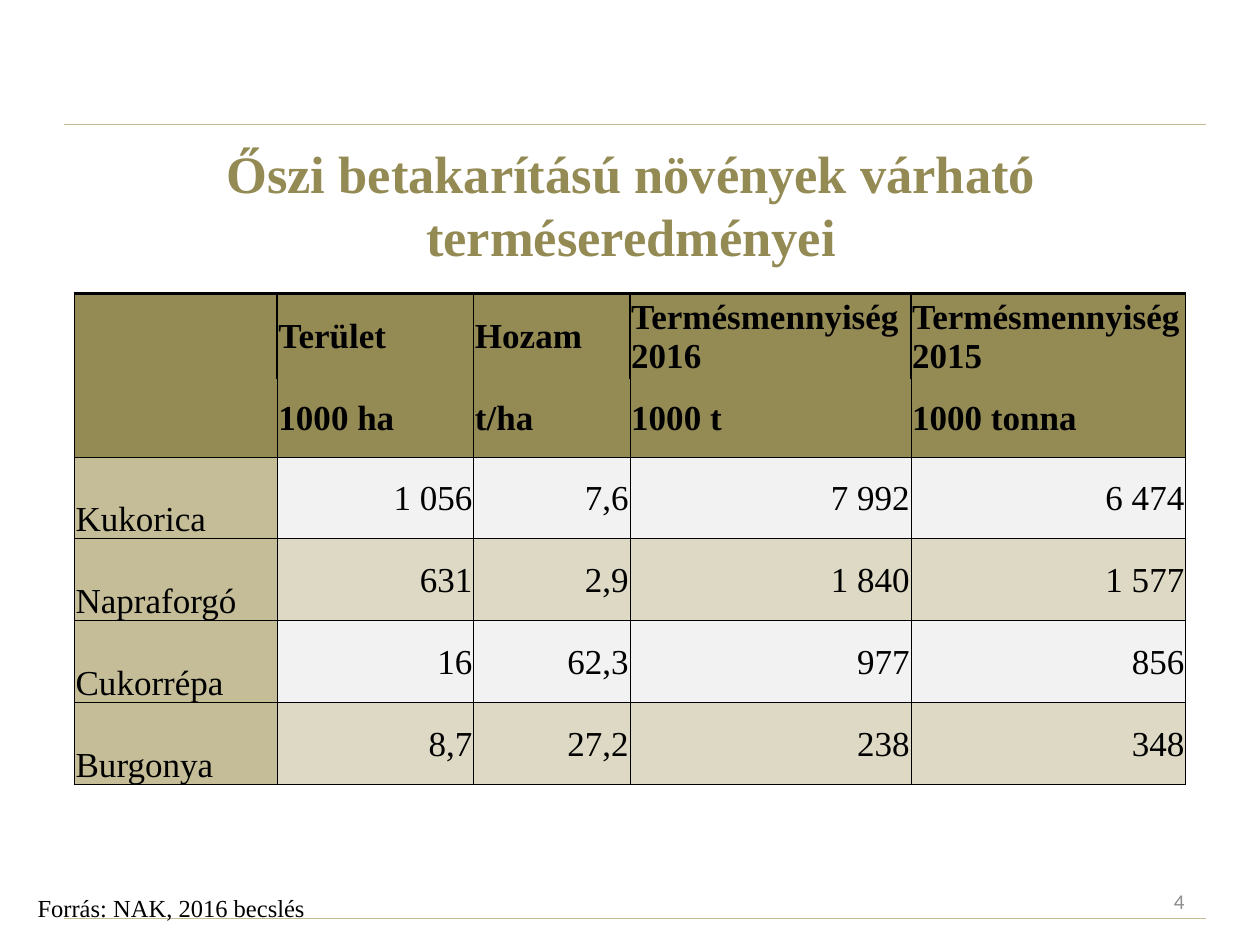
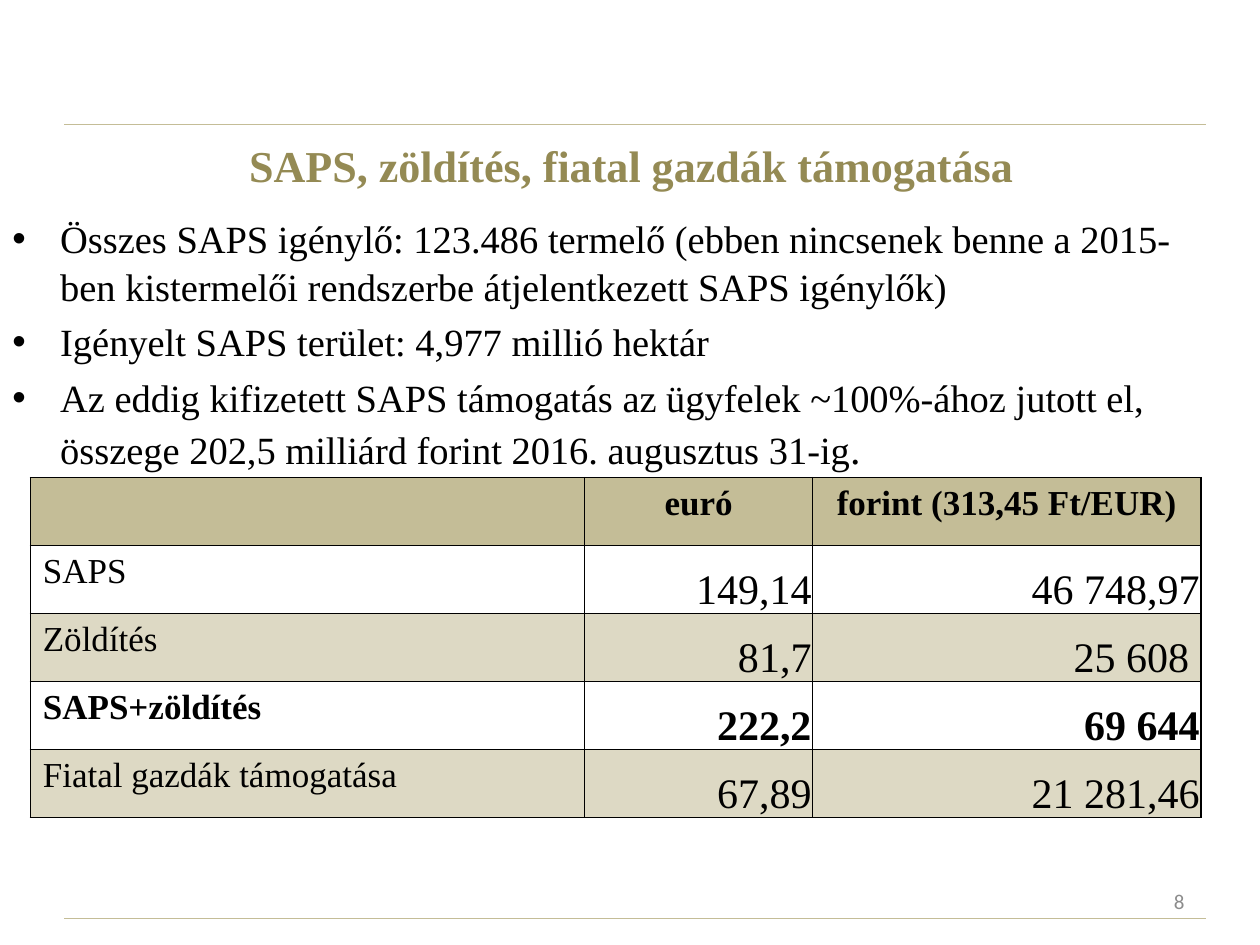
from dataclasses import dataclass, field

from lxml import etree
from pptx import Presentation
from pptx import util as u
from pptx.dml import color
from pptx.enum import shapes, text
from pptx.oxml import ns

Inches, Pt = u.Inches, u.Pt
ALIGN = text.PP_ALIGN
ANCHOR = text.MSO_ANCHOR


@dataclass(frozen=True)
class Theme:
    serif: str = "Times New Roman"
    sans: str = "Calibri"
    olive: str = "948A54"
    sand: str = "C4BD97"
    cream: str = "DDD9C4"
    pale: str = "F2F2F2"
    black: str = "000000"
    grey: str = "8C8C8C"
    title: float = 30
    small_title: float = 25.2
    figure: float = 24
    body: float = 22
    cell: float = 20
    source: float = 14
    number: float = 12


THEME = Theme()


@dataclass
class CellStyle:
    fill: str = None
    size: float = THEME.cell
    bold: bool = False
    align: ALIGN = ALIGN.LEFT
    anchor: ANCHOR = ANCHOR.TOP
    tight: bool = True
    borders: dict = field(default_factory=dict)


def format_font(font, size, ink=THEME.black, bold=False, name=THEME.serif):
    font.name = name
    font.size = Pt(size)
    font.bold = bold
    font.color.rgb = color.RGBColor.from_string(ink)


def add_text_box(slide, place, anchor=ANCHOR.TOP):
    frame = slide.shapes.add_textbox(*map(Inches, place)).text_frame
    frame.word_wrap = True
    frame.vertical_anchor = anchor
    return frame


def add_label(slide, place, words, align=ALIGN.LEFT, anchor=ANCHOR.TOP, **font):
    frame = add_text_box(slide, place, anchor)
    frame.text = words
    paragraph = frame.paragraphs[0]
    paragraph.alignment = align
    format_font(paragraph.runs[0].font, **font)


def add_rule(slide, top):
    rule = slide.shapes.add_connector(
        shapes.MSO_CONNECTOR.STRAIGHT,
        Inches(0.51), Inches(top), Inches(9.57), Inches(top))
    rule.line.color.rgb = color.RGBColor.from_string(THEME.sand)
    rule.line.width = Pt(0.75)
    etree.SubElement(rule._element.spPr, ns.qn("a:effectLst"))


def add_base_slide(presentation, title, title_height, title_size, number):
    slide = presentation.slides.add_slide(presentation.slide_layouts[6])
    for top in (7.29, 0.99):
        add_rule(slide, top)
    add_label(slide, (0.51, 1.07, 9, title_height), title, ALIGN.CENTER,
              ANCHOR.MIDDLE, size=title_size, ink=THEME.olive, bold=True)
    add_label(slide, (7.17, 6.95, 2.33, 0.4), str(number), ALIGN.RIGHT,
              ANCHOR.MIDDLE, size=THEME.number, ink=THEME.grey, name=THEME.sans)
    return slide


def add_bullets(slide, place, items):
    frame = add_text_box(slide, place)
    for index, item in enumerate(items):
        paragraph = frame.add_paragraph() if index else frame.paragraphs[0]
        properties = paragraph._p.get_or_add_pPr()
        properties.set("marL", str(Inches(0.38)))
        properties.set("indent", str(-Inches(0.38)))
        etree.SubElement(properties, ns.qn("a:buFont"), typeface="Arial")
        etree.SubElement(properties, ns.qn("a:buChar"), char="•")
        paragraph.line_spacing = 1.04
        paragraph.space_before = Pt(4.4 if index else 0)
        for words, size in item:
            run = paragraph.add_run()
            run.text = words
            format_font(run.font, size)


def set_borders(cell, widths):
    properties = cell._tc.get_or_add_tcPr()
    for side in "LRTB":
        width = widths[side]
        line = etree.SubElement(properties, ns.qn(f"a:ln{side}"), w=str(Pt(width)))
        if width:
            fill = etree.SubElement(line, ns.qn("a:solidFill"))
            etree.SubElement(fill, ns.qn("a:srgbClr"), val=THEME.black)
        else:
            etree.SubElement(line, ns.qn("a:noFill"))


def fill_cell(cell, words, style, border):
    set_borders(cell, {**dict.fromkeys("LRTB", border), **style.borders})
    if style.fill:
        cell.fill.solid()
        cell.fill.fore_color.rgb = color.RGBColor.from_string(style.fill)
    else:
        cell.fill.background()
    cell.vertical_anchor = style.anchor
    if style.tight:
        cell.margin_left = cell.margin_right = cell.margin_top = Inches(0.01)
        cell.margin_bottom = 0
    if words:
        cell.text = words
        paragraph = cell.text_frame.paragraphs[0]
        paragraph.alignment = style.align
        format_font(paragraph.runs[0].font, style.size, bold=style.bold)


def add_grid(slide, left, top, widths, heights, rows, style_for, border):
    table = slide.shapes.add_table(
        len(heights), len(widths), Inches(left), Inches(top),
        Inches(sum(widths)), Inches(sum(heights))).table
    table.first_row = table.horz_banding = False
    for column, width in zip(table.columns, widths):
        column.width = Inches(width)
    for row, height in zip(table.rows, heights):
        row.height = Inches(height)
    for r, row in enumerate(rows):
        for c, words in enumerate(row):
            fill_cell(table.cell(r, c), words, style_for(r, c), border)


def harvest_style(row, column):
    if row < 2:
        borders = {"L": 1, "R": 1, "T": 1.5, "B": 0} if row == 0 else {"T": 0}
        return CellStyle(THEME.olive, bold=True, anchor=ANCHOR.MIDDLE, borders=borders)
    if column == 0:
        return CellStyle(THEME.sand, anchor=ANCHOR.BOTTOM, borders={"L": 1})
    return CellStyle(THEME.cream if row % 2 else THEME.pale,
                     align=ALIGN.RIGHT, anchor=ANCHOR.MIDDLE)


def support_style(row, column):
    if row == 0:
        return CellStyle(THEME.sand, bold=True, align=ALIGN.CENTER, tight=False)
    fill = None if row % 2 else THEME.cream
    bold = row == 3
    if column == 0:
        return CellStyle(fill, bold=bold, tight=False)
    return CellStyle(fill, THEME.figure, bold, ALIGN.RIGHT, ANCHOR.BOTTOM)


def add_harvest_slide(presentation):
    slide = add_base_slide(
        presentation, "Őszi betakarítású növények várható terméseredményei",
        1.1, THEME.title, 4)
    add_label(slide, (0.2, 7.04, 3.46, 0.34), "Forrás: NAK, 2016 becslés",
              size=THEME.source)
    rows = [
        ("", "Terület", "Hozam", "Termésmennyiség 2016", "Termésmennyiség 2015"),
        ("", "1000 ha", "t/ha", "1000 t", "1000 tonna"),
        ("Kukorica", "1 056", "7,6", "7 992", "6 474"),
        ("Napraforgó", "631", "2,9", "1 840", "1 577"),
        ("Cukorrépa", "16", "62,3", "977", "856"),
        ("Burgonya", "8,7", "27,2", "238", "348"),
    ]
    add_grid(slide, 0.59, 2.33, (1.61, 1.56, 1.24, 2.23, 2.18),
             [0.65, 0.62] + [0.65] * 4, rows, harvest_style, 0.5)


def add_support_slide(presentation):
    slide = add_base_slide(presentation, "SAPS, zöldítés, fiatal gazdák támogatása",
                           0.47, THEME.small_title, 8)
    add_bullets(slide, (0, 1.64, 9.8, 5.65), [
        [("Összes SAPS igénylő: 123.486 termelő (ebben nincsenek benne a "
          "2015-ben kistermelői rendszerbe átjelentkezett SAPS igénylők)", THEME.body)],
        [("Igényelt SAPS terület: 4,977 millió hektár", THEME.body)],
        [("Az eddig kifizetett SAPS támogatás az ügyfelek ~100%-ához jutott el, "
          "összege 202,5 milliárd forint 2016. augusztus 31-ig", THEME.body),
         (".", THEME.figure)],
    ])
    rows = [
        ("", "euró", "forint (313,45 Ft/EUR)"),
        ("SAPS", "149,14", "46 748,97"),
        ("Zöldítés", "81,7", "25 608 "),
        ("SAPS+zöldítés", "222,2", "69 644"),
        ("Fiatal gazdák támogatása", "67,89", "21 281,46"),
    ]
    add_grid(slide, 0.24, 3.79, (4.4, 1.81, 3.08), [0.54] * 5, rows,
             support_style, 1)


def main():
    presentation = Presentation()
    presentation.slide_width = Inches(10)
    presentation.slide_height = Inches(7.5)
    add_harvest_slide(presentation)
    add_support_slide(presentation)
    presentation.save("out.pptx")


if __name__ == "__main__":
    main()
